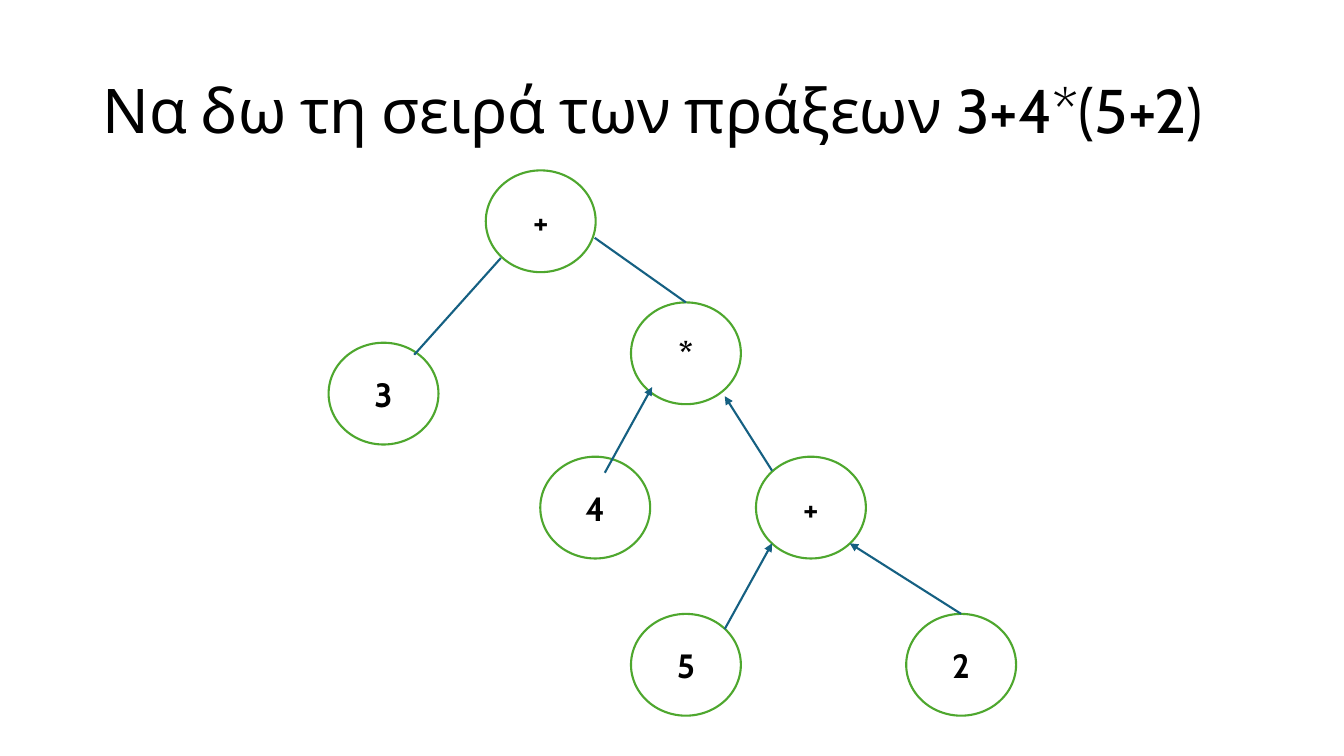
import dataclasses

import pptx
import pptx.dml.color
import pptx.enum.shapes
import pptx.enum.text
import pptx.oxml
import pptx.oxml.ns
import pptx.util

Pt = pptx.util.Pt
rgb = pptx.dml.color.RGBColor.from_string


@dataclasses.dataclass(frozen=True)
class Theme:
    font: str = "Cabin"
    ink: str = "000000"
    node_fill: str = "FFFFFF"
    node_line: str = "4EA72E"
    edge: str = "156082"
    title_size: float = 44
    node_size: float = 24
    line_width: float = 1.5


THEME = Theme()
NODE_WIDTH, NODE_HEIGHT = 78.5, 72.7

# name: (label, left, top)
NODES = {
    "three": ("3", 234.7, 244.8),
    "root": ("+", 347, 121.7),
    "times": ("*", 450.7, 216),
    "four": ("4", 385.9, 326.2),
    "sum": ("+", 540, 326.2),
    "five": ("5", 450.7, 438.5),
    "two": ("2", 647.3, 438.5),
}

# child, start, end, arrow; a start of None is the top of the child
EDGES = [
    ("three", (295.9, 253.4), (357.8, 184.3), False),
    ("five", (517.7, 449.3), (551.5, 388.1), True),
    ("two", None, (607, 388.1), True),
    ("sum", (551.5, 336.2), (517.7, 283), True),
    ("four", (432, 337.7), (465.8, 276.5), True),
    ("times", None, (424.8, 169.9), False),
]


def apply_format(target, values):
    for name, value in values.items():
        setattr(target, name, value)


def write_text(shape, text, size, bold, align, spacing):
    frame = shape.text_frame
    apply_format(frame, {
        "word_wrap": True,
        "vertical_anchor": pptx.enum.text.MSO_ANCHOR.MIDDLE,
    })
    para = frame.paragraphs[0]
    apply_format(para, {"alignment": align, "line_spacing": spacing})
    span = para.add_run()
    span.text = text
    apply_format(span.font, {"name": THEME.font, "size": Pt(size), "bold": bold})
    span.font.color.rgb = rgb(THEME.ink)


def style_line(line, color):
    line.color.rgb = rgb(color)
    line.width = Pt(THEME.line_width)


def add_title(page, text):
    box = page.shapes.add_textbox(Pt(66), Pt(28.8), Pt(828), Pt(104.4))
    write_text(box, text, THEME.title_size, False,
               pptx.enum.text.PP_ALIGN.LEFT, 0.9)


def add_node(page, label, left, top):
    node = page.shapes.add_shape(
        pptx.enum.shapes.MSO_SHAPE.OVAL,
        Pt(left), Pt(top), Pt(NODE_WIDTH), Pt(NODE_HEIGHT))
    node.shadow.inherit = False
    node.fill.solid()
    node.fill.fore_color.rgb = rgb(THEME.node_fill)
    style_line(node.line, THEME.node_line)
    write_text(node, label, THEME.node_size, True,
               pptx.enum.text.PP_ALIGN.CENTER, 1.0)
    return node


def add_edge(page, child, start, end, arrow):
    """Draw a branch from a child node up to its parent."""
    x, y = start or (0, 0)
    edge = page.shapes.add_connector(
        pptx.enum.shapes.MSO_CONNECTOR.STRAIGHT,
        Pt(x), Pt(y), Pt(end[0]), Pt(end[1]))
    if start is None:
        edge.begin_connect(child, 0)
    style_line(edge.line, THEME.edge)
    if arrow:
        head = pptx.oxml.parse_xml(
            f'<a:tailEnd {pptx.oxml.ns.nsdecls("a")} type="triangle"/>')
        edge.line._get_or_add_ln().append(head)
    edge._element.spPr.append(pptx.oxml.parse_xml(
        f'<a:effectLst {pptx.oxml.ns.nsdecls("a")}/>'))


def main():
    deck = pptx.Presentation()
    apply_format(deck, {"slide_width": Pt(960), "slide_height": Pt(540)})
    page = deck.slides.add_slide(deck.slide_layouts[6])
    add_title(page, "Να δω τη σειρά των πράξεων 3+4*(5+2)")
    nodes = {name: add_node(page, *node) for name, node in NODES.items()}
    for child, start, end, arrow in EDGES:
        add_edge(page, nodes[child], start, end, arrow)
    deck.save("out.pptx")


if __name__ == "__main__":
    main()
